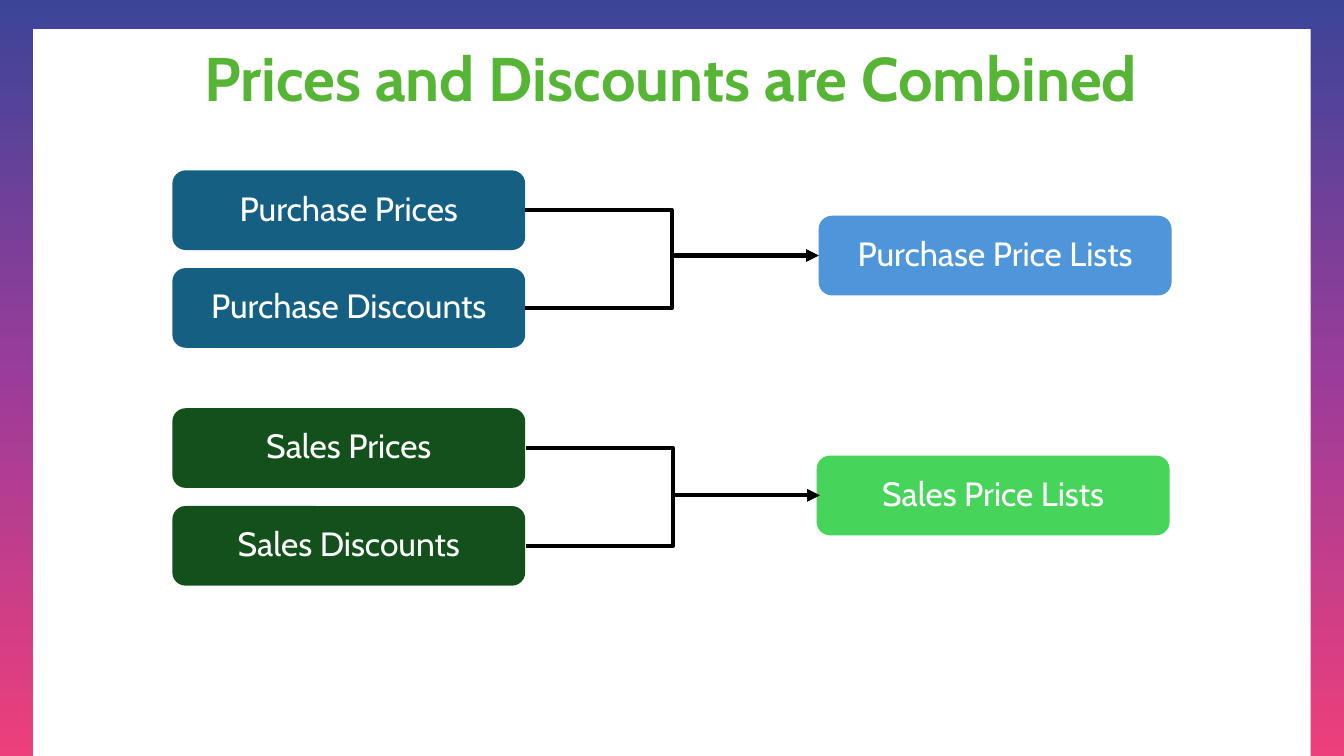
from copy import deepcopy

from lxml.etree import SubElement
from pptx import Presentation
from pptx.dml.color import RGBColor
from pptx.enum.shapes import MSO_CONNECTOR, MSO_SHAPE
from pptx.enum.text import MSO_ANCHOR, PP_ALIGN
from pptx.oxml.ns import qn
from pptx.util import Inches, Pt

HUES = {
    "top": "3B4598", "mid": "9C3C9A", "base": "ED3F7B",
    "white": "FFFFFF", "black": "000000", "title": "57B535",
    "teal": "156082", "blue": "4E95D9", "forest": "13501B", "green": "47D45A",
}


def add_block(kind, x, y, w, h, hue):
    block = slide.shapes.add_shape(kind, Inches(x), Inches(y), Inches(w), Inches(h))
    block.shadow.inherit = False
    block.line.fill.background()
    block.fill.solid()
    block.fill.fore_color.rgb = RGBColor.from_string(HUES[hue])
    return block


def write(shape, text, size, hue, bold=False):
    frame = shape.text_frame
    frame.word_wrap = True
    frame.vertical_anchor = MSO_ANCHOR.MIDDLE
    line = frame.paragraphs[0]
    line.alignment = PP_ALIGN.CENTER
    line.line_spacing = 0.9
    run = line.add_run()
    run.text = text
    run.font.name = "Cabin"
    run.font.size = Pt(size)
    run.font.bold = bold
    run.font.color.rgb = RGBColor.from_string(HUES[hue])


deck = Presentation()
deck.slide_width, deck.slide_height = Inches(13.33), Inches(7.5)
slide = deck.slides.add_slide(deck.slide_layouts[6])

# Gradient frame around a white panel
frame = add_block(MSO_SHAPE.RECTANGLE, 0, 0, 13.33, 7.5, "top")
frame.fill.gradient()
frame.fill.gradient_angle = 270
stops = frame._element.spPr.find(qn("a:gradFill")).find(qn("a:gsLst"))
stops.insert(1, deepcopy(stops[0]))
for stop, place, hue in zip(frame.fill.gradient_stops, (0, 0.5, 1), ("top", "mid", "base")):
    stop.position = place
    stop.color.rgb = RGBColor.from_string(HUES[hue])
add_block(MSO_SHAPE.RECTANGLE, 0.33, 0.29, 12.67, 7.21, "white")

# Title
title = slide.shapes.add_textbox(Inches(0.43), Inches(0.33), Inches(12.45), Inches(0.96))
write(title, "Prices and Discounts are Combined", 44, "title", True)

# Each group: two sources on the left merge into one list on the right
WIDE, HIGH, STEP = 3.5, 0.79, 0.97
groups = [
    ("Purchase", 1.69, 8.12, 2.14, 5.21, "teal", "blue"),
    ("Sales", 4.05, 8.1, 4.52, 5.22, "forest", "green"),
]
for name, top, list_x, list_y, start, dark, light in groups:
    boxes = [
        (f"{name} Prices", 1.71, top, dark),
        (f"{name} Discounts", 1.71, top + STEP, dark),
        (f"{name} Price Lists", list_x, list_y, light),
    ]
    for text, x, y, hue in boxes:
        box = add_block(MSO_SHAPE.ROUNDED_RECTANGLE, x, y, WIDE, HIGH, hue)
        body = box.text_frame
        body.margin_left = body.margin_right = Inches(0.2)
        body.margin_top = body.margin_bottom = Inches(0.16)
        write(box, text, 24, "white")

    # Elbow arrows
    for row in range(2):
        arrow = slide.shapes.add_connector(
            MSO_CONNECTOR.ELBOW,
            Inches(start), Inches(top + row * STEP + HIGH / 2),
            Inches(start + 2.91), Inches(list_y + HIGH / 2))
        arrow.line.width = Pt(3)
        arrow.line.color.rgb = RGBColor.from_string(HUES["black"])
        SubElement(arrow.line._get_or_add_ln(), qn("a:tailEnd"), type="triangle")
        SubElement(arrow._element.spPr, qn("a:effectLst"))

deck.save("out.pptx")
